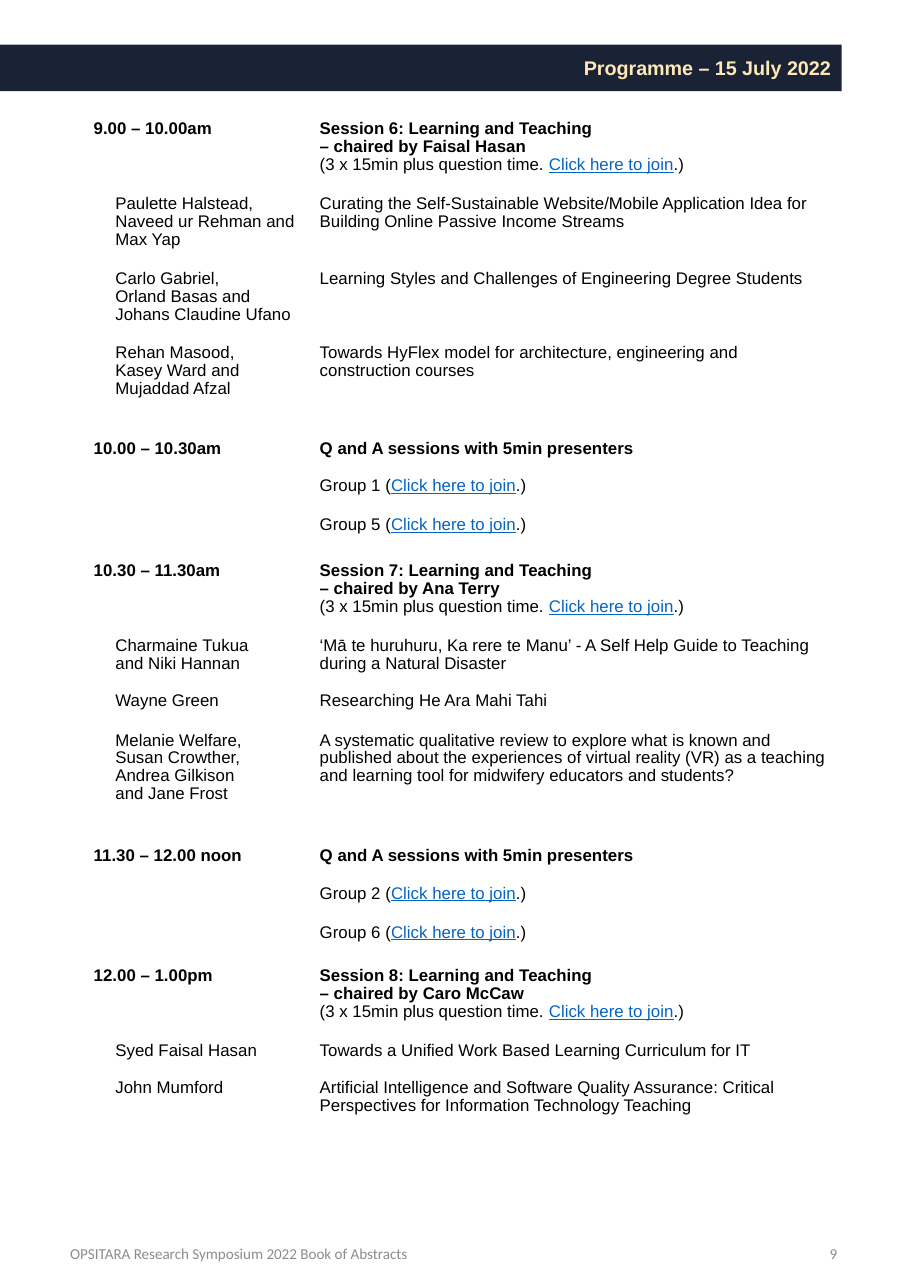
from dataclasses import dataclass

from lxml.etree import SubElement
from pptx import Presentation
from pptx.dml.color import RGBColor
from pptx.enum.text import MSO_ANCHOR as Anchor, MSO_AUTO_SIZE as AutoSize, PP_ALIGN as Align
from pptx.oxml.ns import qn
from pptx.util import Cm, Pt

NAVY, CREAM, BLACK, BLUE, GREY = "1A2235", "FEE8B6", "000000", "0563C1", "8C8C8C"
JOIN = "Click here to join"
LINE = 0.43  # height of a text line, and of the top and bottom margins together


def colour(hex_code):
    return RGBColor.from_string(hex_code)


@dataclass
class Entry:
    """One programme row; each side is a list of (text, bold) paragraphs."""
    left: list
    right: list
    lines: int
    gap: float = 0
    indent: float = 0

    @property
    def height(self):
        return LINE * (self.lines + 1) + self.gap


def session(time, number, chair):
    return Entry([(time, True)],
                 [(f"Session {number}: Learning and Teaching", True),
                  (f"– chaired by {chair}", True),
                  (f"(3 x 15min plus question time. {JOIN}.)", False)], 3)


def talk(authors, title, lines, gap=0):
    return Entry([(author, False) for author in authors], [(title, False)], lines, gap, 0.5)


def questions(time):
    return Entry([(time, True)], [("Q and A sessions with 5min presenters", True)], 1)


def group(number, gap=0):
    return Entry([], [(f"Group {number} ({JOIN}.)", False)], 1, gap)


PROGRAMME = [
    session("9.00 – 10.00am", 6, "Faisal Hasan"),
    talk(["Paulette Halstead, Naveed ur Rehman and Max Yap"],
         "Curating the Self-Sustainable Website/Mobile Application Idea for "
         "Building Online Passive Income Streams", 3),
    talk(["Carlo Gabriel,", "Orland Basas and Johans Claudine Ufano"],
         "Learning Styles and Challenges of Engineering Degree Students", 3),
    talk(["Rehan Masood,", "Kasey Ward and Mujaddad Afzal"],
         "Towards HyFlex model for architecture, engineering and construction courses", 3, 0.48),
    questions("10.00 – 10.30am"),
    group(1),
    group(5, 0.2),
    session("10.30 – 11.30am", 7, "Ana Terry"),
    talk(["Charmaine Tukua", "and Niki Hannan"],
         "‘Mā te huruhuru, Ka rere te Manu’ - A Self Help Guide to Teaching "
         "during a Natural Disaster", 2),
    talk(["Wayne Green"], "Researching He Ara Mahi Tahi", 1, 0.04),
    talk(["Melanie Welfare,", "Susan Crowther, Andrea Gilkison", "and Jane Frost"],
         "A systematic qualitative review to explore what is known and published about "
         "the experiences of virtual reality (VR) as a teaching and learning tool for "
         "midwifery educators and students?", 4, 0.52),
    questions("11.30 – 12.00 noon"),
    group(2),
    group(6, 0.15),
    session("12.00 – 1.00pm", 8, "Caro McCaw"),
    talk(["Syed Faisal Hasan"], "Towards a Unified Work Based Learning Curriculum for IT", 1),
    talk(["John Mumford"],
         "Artificial Intelligence and Software Quality Assurance: Critical "
         "Perspectives for Information Technology Teaching", 2),
]


class ProgrammePage:
    body_font, footer_font = "Arial", "Calibri"
    body_size, title_size, footer_size = 11, 12.9, 9.9

    def __init__(self, deck):
        self.slide = deck.slides.add_slide(deck.slide_layouts[5])

    def add_run(self, paragraph, text, font, size, ink, bold=False, underline=False):
        run = paragraph.add_run()
        run.text = text
        run.font.name, run.font.size = font, Pt(size)
        run.font.color.rgb = colour(ink)
        run.font.bold, run.font.underline = bold, underline

    def banner(self, text, left, top, width, height):
        title = self.slide.shapes.title
        title.left, title.top, title.width, title.height = map(Cm, (left, top, width, height))
        title.fill.solid()
        title.fill.fore_color.rgb = colour(NAVY)
        frame = title.text_frame
        frame.auto_size, frame.vertical_anchor = AutoSize.NONE, Anchor.MIDDLE
        frame.margin_left = frame.margin_right = Cm(0.25)
        frame.margin_top = frame.margin_bottom = 0
        paragraph = frame.paragraphs[0]
        paragraph.alignment = Align.RIGHT
        self.add_run(paragraph, text, self.body_font, self.title_size, CREAM, bold=True)

    def footer(self, text, left, width, align):
        frame = self.slide.shapes.add_textbox(Cm(left), Cm(28.12), Cm(width), Cm(1.58)).text_frame
        frame.word_wrap, frame.vertical_anchor = True, Anchor.MIDDLE
        paragraph = frame.paragraphs[0]
        paragraph.alignment = align
        self.add_run(paragraph, text, self.footer_font, self.footer_size, GREY)

    def fill_cell(self, cell, content, margin_left, indent=0):
        cell.fill.background()
        cell.margin_left, cell.margin_right = Cm(margin_left), Cm(0.26)
        cell.margin_top = cell.margin_bottom = Cm(0.21)
        frame = cell.text_frame
        if not content:  # keeps an empty cell as low as a body line
            SubElement(frame.paragraphs[0]._p, qn("a:endParaRPr"), sz=str(self.body_size * 100))
        for index, (text, bold) in enumerate(content):
            paragraph = frame.add_paragraph() if index else frame.paragraphs[0]
            paragraph.line_spacing = 0.96
            if indent:
                properties = paragraph._p.get_or_add_pPr()
                properties.set("marL", str(Cm(indent)))
                properties.set("indent", "0")
            before, link, after = text.partition(JOIN)
            style = self.body_font, self.body_size
            self.add_run(paragraph, before, *style, BLACK, bold)
            if link:
                self.add_run(paragraph, link, *style, BLUE, underline=True)
                self.add_run(paragraph, after, *style, BLACK)

    def timetable(self, entries, left, top, widths):
        height = sum(entry.height for entry in entries)
        table = self.slide.shapes.add_table(len(entries), len(widths), Cm(left), Cm(top),
                                            Cm(sum(widths)), Cm(height)).table
        table.first_row = table.horz_banding = False
        for column, width in zip(table.columns, widths):
            column.width = Cm(width)
        for row, entry in zip(table.rows, entries):
            row.height = Cm(entry.height)
            people, topic = row.cells
            self.fill_cell(people, entry.left, 0.53, entry.indent)
            self.fill_cell(topic, entry.right, 0.28)


def main():
    deck = Presentation()
    deck.slide_width, deck.slide_height = Cm(21), Cm(29.7)
    page = ProgrammePage(deck)
    page.banner("Programme – 15 July 2022", 0, 1.03, 19.4, 1.07)
    page.timetable(PROGRAMME, 1.63, 2.57, (5.46, 12.32))
    page.footer("9", 14.83, 4.72, Align.RIGHT)
    page.footer("OPSITARA Research Symposium 2022 Book of Abstracts", 1.37, 8.76, Align.LEFT)
    deck.save("out.pptx")


if __name__ == "__main__":
    main()
